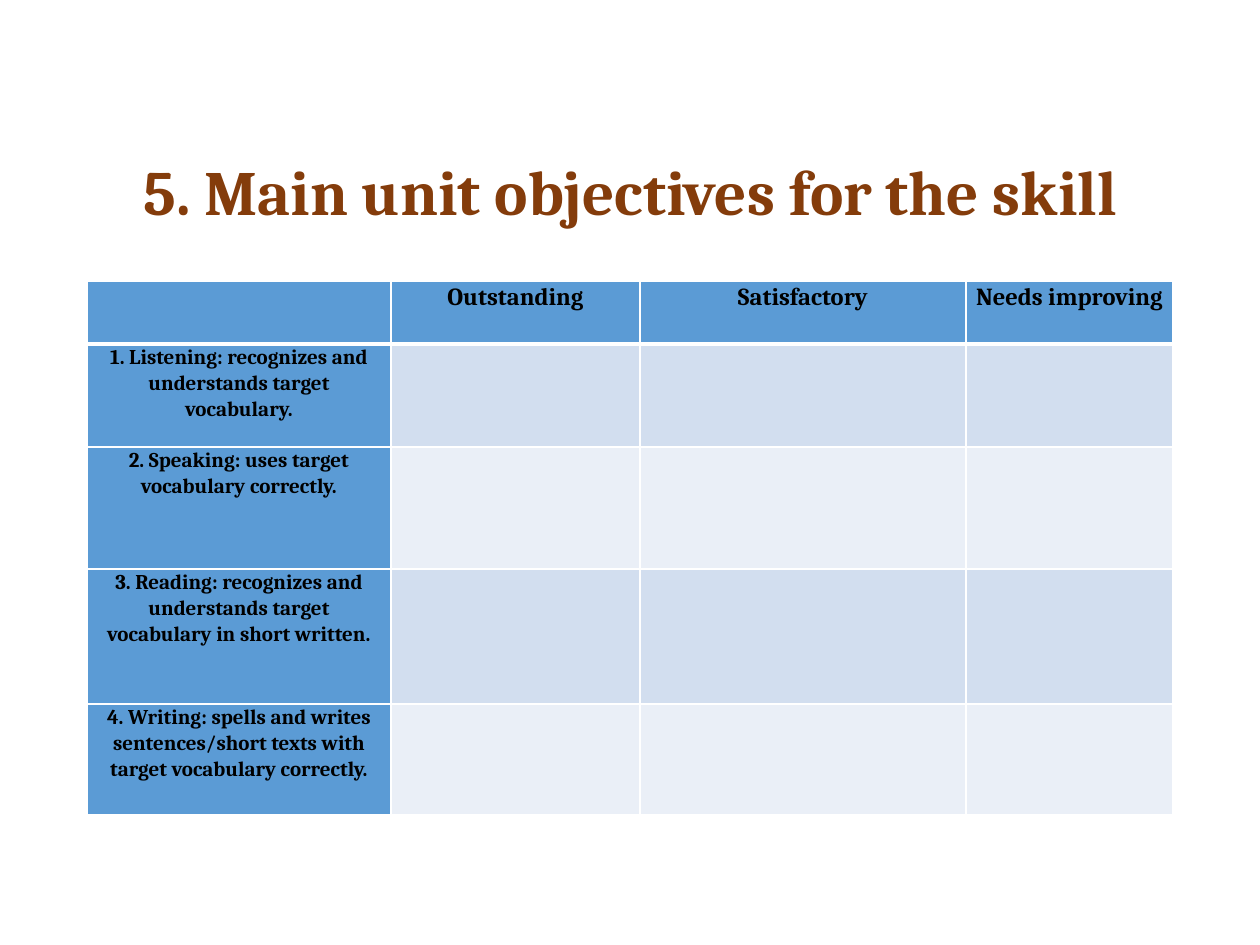
"""Builds a slide with an assessment grid of the unit objectives for each skill."""
from lxml import etree
from pptx import Presentation
from pptx import util as u
from pptx.dml.color import RGBColor
from pptx.enum import text
from pptx.oxml import ns

EMU_PER_PX = 914400 / 126
FONT = "Cambria"
BROWN = RGBColor(0x84, 0x3C, 0x0B)
BLACK = RGBColor(0x00, 0x00, 0x00)
WHITE = RGBColor(0xFF, 0xFF, 0xFF)
BLUE = RGBColor(0x5B, 0x9B, 0xD5)
BANDS = (RGBColor(0xD2, 0xDE, 0xEF), RGBColor(0xEA, 0xEF, 0xF7))

TITLE = "5. Main unit objectives for the skill"
RATINGS = ("Outstanding", "Satisfactory", "Needs improving")
OBJECTIVES = (
    "1. Listening: recognizes and understands target vocabulary.",
    "2. Speaking: uses target vocabulary correctly.",
    "3. Reading: recognizes and understands target vocabulary in short written.",
    "4. Writing: spells and writes sentences/short texts with target vocabulary correctly.",
)
LEFT, WIDTH = 87, 1086
COLUMN_WIDTHS = (304, 249, 326, 207)
ROW_HEIGHTS = (63, 103, 122, 135, 111)


def px(length):
    return u.Emu(round(length * EMU_PER_PX))


def write(frame, wording, size, color, spacing):
    paragraph = frame.paragraphs[0]
    paragraph.alignment = text.PP_ALIGN.CENTER
    paragraph.line_spacing = spacing
    run = paragraph.add_run()
    run.text = wording
    run.font.name = FONT
    run.font.size = u.Pt(size)
    run.font.bold = True
    run.font.color.rgb = color


def add_title(slide):
    title = slide.shapes.title
    title.left, title.top = px(LEFT), px(142)
    title.width, title.height = px(WIDTH), px(183)
    frame = title.text_frame
    frame.word_wrap = True
    frame.auto_size = text.MSO_AUTO_SIZE.NONE
    frame.vertical_anchor = text.MSO_ANCHOR.MIDDLE
    frame.margin_bottom = px(83)
    write(frame, TITLE, 36, BROWN, 0.9)


def set_borders(cell, bottom):
    properties = cell._tc.get_or_add_tcPr()
    widths = {"a:lnL": 1, "a:lnR": 1, "a:lnT": 1, "a:lnB": bottom}
    for position, (side, width) in enumerate(widths.items()):
        line = etree.Element(ns.qn(side), w=str(u.Pt(width)))
        fill = etree.SubElement(line, ns.qn("a:solidFill"))
        etree.SubElement(fill, ns.qn("a:srgbClr"), val=str(WHITE))
        properties.insert(position, line)


def style_cell(cell, color, bottom):
    cell.fill.solid()
    cell.fill.fore_color.rgb = color
    set_borders(cell, bottom)


def label_cell(cell, wording, size):
    cell.margin_left = cell.margin_right = px(9)
    cell.margin_top = cell.margin_bottom = 0
    write(cell.text_frame, wording, size, BLACK, 1.07)


def add_grid(slide):
    grid = slide.shapes.add_table(
        len(ROW_HEIGHTS), len(COLUMN_WIDTHS),
        px(LEFT), px(281), px(WIDTH), px(sum(ROW_HEIGHTS))).table
    for column, width in zip(grid.columns, COLUMN_WIDTHS):
        column.width = px(width)
    for row_index, (row, height) in enumerate(zip(grid.rows, ROW_HEIGHTS)):
        row.height = px(height)
        for column_index, cell in enumerate(row.cells):
            is_header = row_index == 0 or column_index == 0
            color = BLUE if is_header else BANDS[(row_index - 1) % 2]
            style_cell(cell, color, 3 if row_index == 0 else 1)
    for column_index, rating in enumerate(RATINGS, 1):
        label_cell(grid.cell(0, column_index), rating, 14)
    for row_index, objective in enumerate(OBJECTIVES, 1):
        label_cell(grid.cell(row_index, 0), objective, 12)


def main():
    deck = Presentation()
    deck.slide_width, deck.slide_height = px(1260), px(945)
    slide = deck.slides.add_slide(deck.slide_layouts[5])
    add_title(slide)
    add_grid(slide)
    deck.save("out.pptx")


if __name__ == "__main__":
    main()
